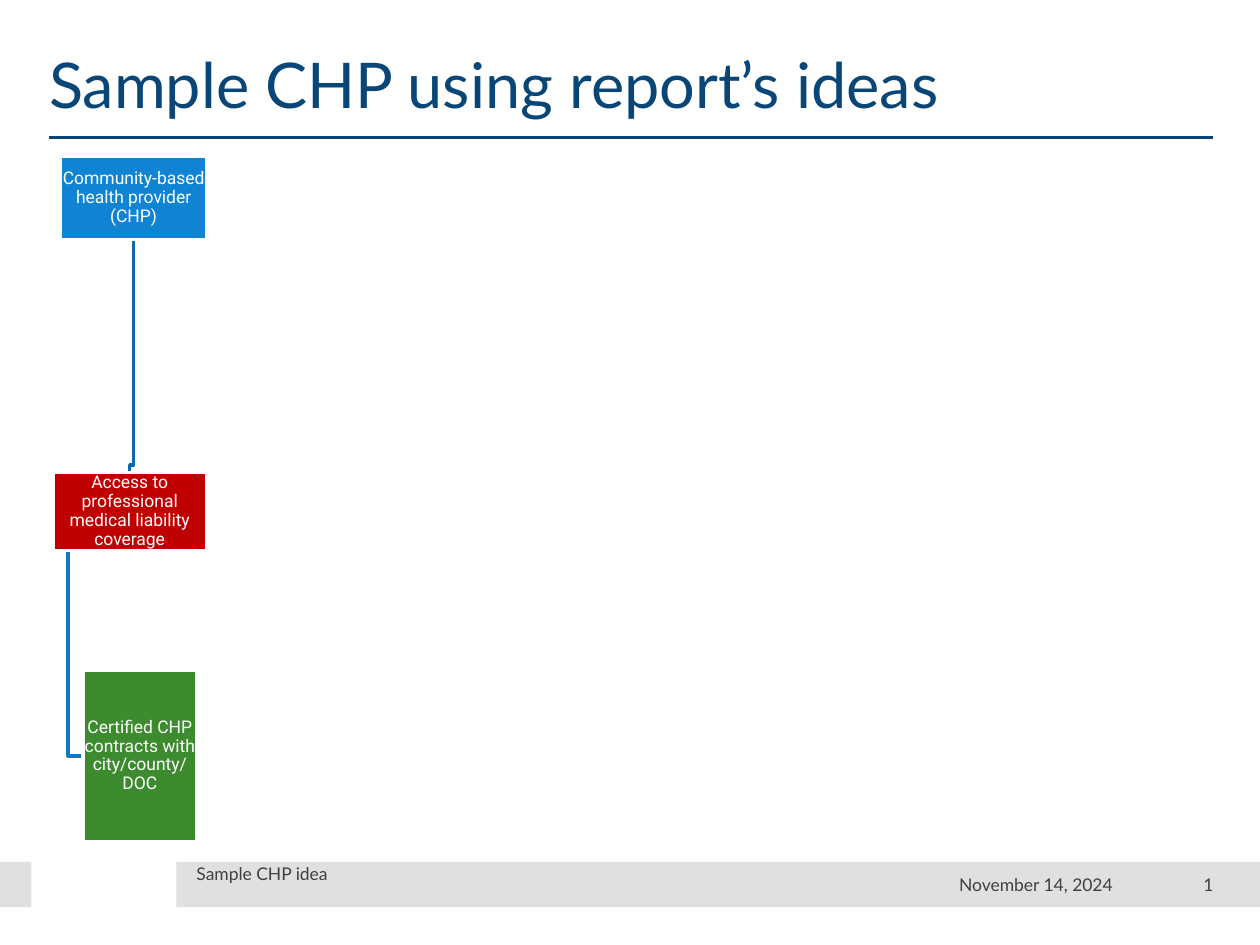
from lxml.etree import SubElement
from pptx import Presentation
from pptx.dml.color import RGBColor
from pptx.enum.shapes import MSO_CONNECTOR, MSO_SHAPE
from pptx.enum.text import MSO_ANCHOR, MSO_AUTO_SIZE, PP_ALIGN
from pptx.oxml.ns import qn
from pptx.util import Pt

COLORS = {
    "navy": "084678", "blue": "1084D3", "red": "C00000", "green": "3D8B2F",
    "link_upper": "0D6AA9", "link_lower": "0F78BF",
    "band": "E0E0E0", "gray": "404040", "white": "FFFFFF",
}
TITLE_FORMAT = {"name": "Lato", "size": Pt(36), "bold": False}
BOX_FORMAT = {"name": "Roboto", "size": Pt(10)}
FOOTER_FORMAT = {"name": "Lato", "size": Pt(10)}


def color(name):
    """Return the named colour."""
    return RGBColor.from_string(COLORS[name])


def set_attributes(target, values):
    """Set each attribute named in values on the target."""
    for name, value in values.items():
        setattr(target, name, value)


def write(shape, text, font_format, font_color, align, anchor, margin=0, **spacing):
    """Put one formatted paragraph into a shape."""
    frame = shape.text_frame
    frame.text = text
    margins = {f"margin_{side}": Pt(margin) for side in ("left", "top", "right", "bottom")}
    set_attributes(frame, {"word_wrap": True, "auto_size": MSO_AUTO_SIZE.NONE,
                           "vertical_anchor": anchor, **margins})
    paragraph = frame.paragraphs[0]
    set_attributes(paragraph, {"alignment": align, **spacing})
    font = paragraph.runs[0].font
    set_attributes(font, font_format)
    font.color.rgb = color(font_color)


def add_rectangle(slide, box, fill, line=None):
    """Add a flat rectangle, outlined if a line colour is given."""
    shape = slide.shapes.add_shape(MSO_SHAPE.RECTANGLE, *map(Pt, box))
    shape.shadow.inherit = False
    shape.fill.solid()
    shape.fill.fore_color.rgb = color(fill)
    if line:
        shape.line.color.rgb = color(line)
        shape.line.width = Pt(2)
    else:
        shape.line.fill.background()
    return shape


def add_title(slide, box, text):
    """Place the title over a rule along the bottom of the box."""
    left, top, width, height = box
    title = slide.shapes.title
    set_attributes(title, dict(zip(("left", "top", "width", "height"), map(Pt, box))))
    write(title, text, TITLE_FORMAT, "navy", PP_ALIGN.LEFT, MSO_ANCHOR.TOP,
          line_spacing=1.0, space_before=Pt(0))
    bottom = Pt(top + height)
    rule = slide.shapes.add_connector(
        MSO_CONNECTOR.STRAIGHT, Pt(left), bottom, Pt(left + width), bottom)
    rule.line.color.rgb = color("navy")
    rule.line.width = Pt(2)
    SubElement(rule._element.spPr, qn("a:effectLst"))


def add_elbow(slide, points, line):
    """Draw an open bent line through the points."""
    start, *rest = [tuple(map(Pt, point)) for point in points]
    builder = slide.shapes.build_freeform(*start)
    builder.add_line_segments(rest, close=False)
    shape = builder.convert_to_shape()
    shape.shadow.inherit = False
    shape.fill.background()
    shape.line.color.rgb = color(line)
    shape.line.width = Pt(2)


def add_hierarchy(slide, box):
    """Draw the three linked steps from the top to the bottom of the box."""
    left, top, width, height = box
    provider = (left + 4.4, top, 83.5, 47.5)
    access = (left, top + 180.7, width, 44.6)
    contract = (left + 17.3, top + height - 97.9, 64.8, 97.9)

    provider_x = provider[0] + provider[2] / 2
    access_x = access[0] + access[2] / 2
    trunk_x = access[0] + access[2] / 10
    turn_y = access[1] - 4.3
    contract_y = contract[1] + contract[3] / 2
    add_elbow(slide, [(trunk_x, access[1] + access[3]), (trunk_x, contract_y),
                      (contract[0], contract_y)], "link_lower")
    add_elbow(slide, [(provider_x, provider[1] + provider[3]), (provider_x, turn_y),
                      (access_x, turn_y), (access_x, access[1])], "link_upper")

    steps = [
        (provider, "blue", "Community-based health provider (CHP)"),
        (access, "red", "Access to professional medical liability coverage"),
        (contract, "green", "Certified CHP contracts with city/county/ DOC"),
    ]
    for step_box, fill, text in steps:
        shape = add_rectangle(slide, step_box, fill, "white")
        write(shape, text, BOX_FORMAT, "white", PP_ALIGN.CENTER, MSO_ANCHOR.MIDDLE,
              margin=0.5, line_spacing=0.9, space_after=Pt(3.5))


def add_footer(slide, box):
    """Draw the split footer band with its caption, date and number."""
    left, top, width, height = box
    for start, end in ((left, left + 18), (left + 100.8, left + width)):
        add_rectangle(slide, (start, top, end - start, height), "band")
    entries = [
        (112.3, 264.2, "Sample CHP idea", PP_ALIGN.LEFT, 12),
        (468, 167.8, "November 14, 2024", PP_ALIGN.RIGHT, 0),
        (643, 50.4, "1", PP_ALIGN.RIGHT, 0),
    ]
    for offset, entry_width, text, align, lift in entries:
        entry = slide.shapes.add_textbox(
            Pt(left + offset), Pt(top + 5), Pt(entry_width), Pt(15.8))
        write(entry, text, FOOTER_FORMAT, "gray", align, MSO_ANCHOR.MIDDLE)
        entry.text_frame.margin_bottom = Pt(lift)


def main():
    """Build the slide and save it."""
    presentation = Presentation()
    presentation.slide_width, presentation.slide_height = Pt(720), Pt(540)
    slide = presentation.slides.add_slide(presentation.slide_layouts[5])
    add_title(slide, (28.1, 25.9, 665.3, 52.6), "Sample CHP using report’s ideas")
    add_hierarchy(slide, (30.2, 89.3, 87.8, 391.6))
    add_footer(slide, (0, 492.5, 720, 25.9))
    presentation.save("out.pptx")


if __name__ == "__main__":
    main()
